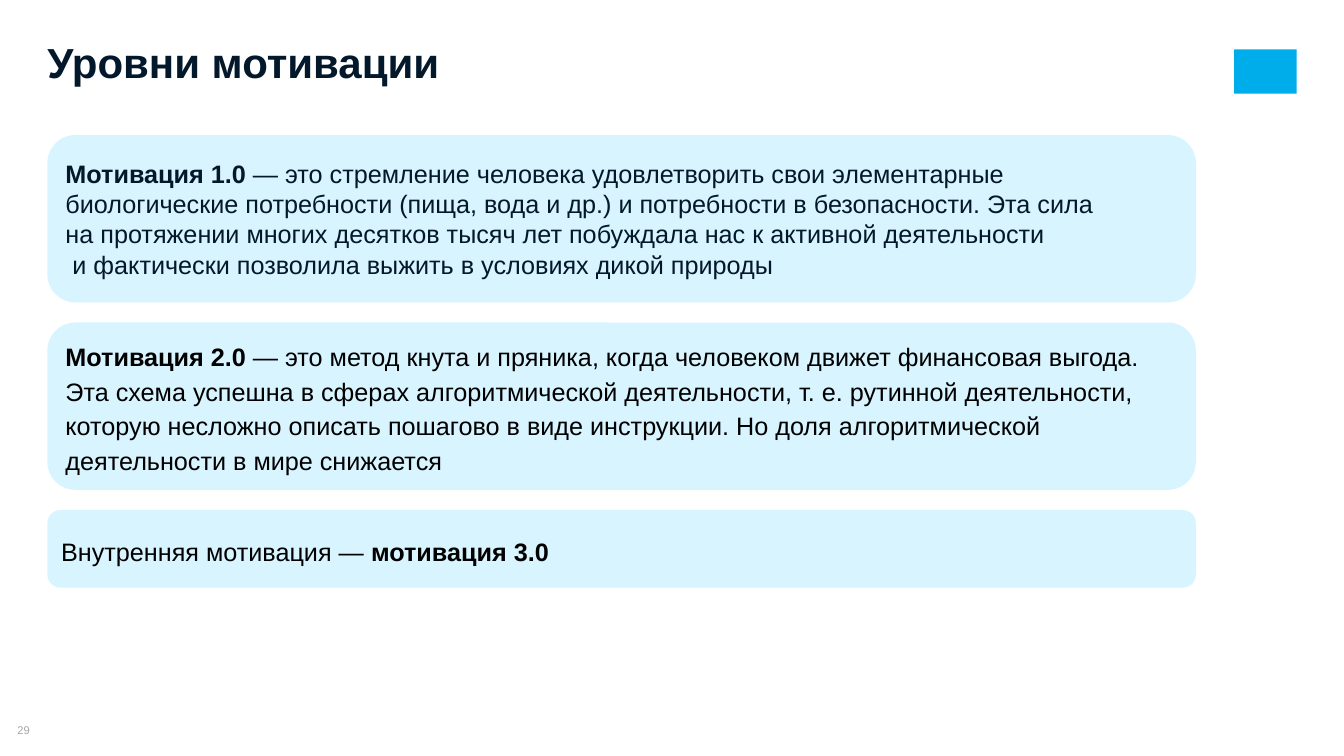
from dataclasses import dataclass

from lxml import etree
from pptx import Presentation
from pptx.dml.color import RGBColor
from pptx.enum.shapes import MSO_SHAPE as Shape
from pptx.enum.text import MSO_ANCHOR as Anchor, MSO_AUTO_SIZE as AutoSize, PP_ALIGN as Align
from pptx.oxml.ns import qn
from pptx.util import Inches, Pt


@dataclass(frozen=True)
class Theme:
    font: str = "Arial"
    navy: str = "03182B"
    black: str = "000000"
    grey: str = "A6A6A6"
    accent: str = "00ADEB"
    card: str = "C8F0FF"
    card_alpha: int = 70000
    title_size: int = 30
    body_size: int = 18
    number_size: int = 8


theme = Theme()


def style(span, size, color, bold=False):
    span.font.name = theme.font
    span.font.size = Pt(size)
    span.font.bold = bold
    span.font.color.rgb = RGBColor.from_string(color)


def paint(shape, color):
    shape.shadow.inherit = False
    shape.fill.solid()
    shape.fill.fore_color.rgb = RGBColor.from_string(color)
    shape.line.fill.background()


deck = Presentation()
deck.slide_width, deck.slide_height = Inches(13.33), Inches(7.5)
page = deck.slides.add_slide(deck.slide_layouts[5])

# Plain mark in the corner
mark = page.shapes.add_shape(Shape.RECTANGLE, Inches(12.24), Inches(0.49), Inches(0.62), Inches(0.44))
paint(mark, theme.accent)

# Title and page number
title = page.shapes.title
title.left, title.top, title.width, title.height = Inches(0.47), Inches(0.46), Inches(10.51), Inches(0.41)
number = page.shapes.add_textbox(Inches(0), Inches(7.18), Inches(0.47), Inches(0.13))
labels = [
    (title, "Уровни мотивации", theme.title_size, theme.navy, True, Align.LEFT, Anchor.TOP, 0.8),
    (number, "29", theme.number_size, theme.grey, False, Align.CENTER, Anchor.MIDDLE, 1.0),
]
for box, text, size, color, bold, align, anchor, spacing in labels:
    frame = box.text_frame
    frame.text = text
    frame.word_wrap = True
    frame.auto_size = AutoSize.SHAPE_TO_FIT_TEXT
    frame.vertical_anchor = anchor
    frame.margin_left = frame.margin_top = frame.margin_right = frame.margin_bottom = 0
    para = frame.paragraphs[0]
    para.alignment = align
    para.line_spacing = spacing
    style(para.runs[0], size, color, bold)

# Cards, stacked with an equal gap: height, colour, line spacing, (text, bold) parts
cards = [
    (1.66, theme.navy, 1.0, [
        ("Мотивация 1.0 ", True),
        ("— это стремление человека удовлетворить свои элементарные биологические потребности "
         "(пища, вода и др.) и потребности в безопасности. Эта сила \n"
         "на протяжении многих десятков тысяч лет побуждала нас к активной деятельности \n"
         " и фактически позволила выжить в условиях дикой природы", False),
    ]),
    (1.66, theme.black, 1.15, [
        ("Мотивация 2.0 ", True),
        ("— это метод кнута и пряника, когда человеком движет финансовая выгода. "
         "Эта схема успешна в сферах алгоритмической деятельности, т. е. рутинной деятельности, "
         "которую несложно описать пошагово в виде инструкции. "
         "Но доля алгоритмической деятельности в мире снижается", False),
    ]),
    (0.77, theme.black, 1.15, [
        ("Внутренняя мотивация — ", False),
        ("мотивация 3.0", True),
    ]),
]
gap = 0.2
top = 1.34
for height, color, spacing, parts in cards:
    card = page.shapes.add_shape(
        Shape.ROUNDED_RECTANGLE, Inches(0.47), Inches(top), Inches(11.39), Inches(height))
    paint(card, theme.card)
    tint = card.fill._xPr.find(qn("a:solidFill"))[0]
    etree.SubElement(tint, qn("a:alpha"), val=str(theme.card_alpha))
    frame = card.text_frame
    frame.word_wrap = True
    frame.vertical_anchor = Anchor.MIDDLE
    para = frame.paragraphs[0]
    para.alignment = Align.LEFT
    para.line_spacing = spacing
    for text, bold in parts:
        for index, line in enumerate(text.split("\n")):
            if index:
                para.add_line_break()
            span = para.add_run()
            span.text = line
            style(span, theme.body_size, color, bold)
    top += height + gap

deck.save("out.pptx")
